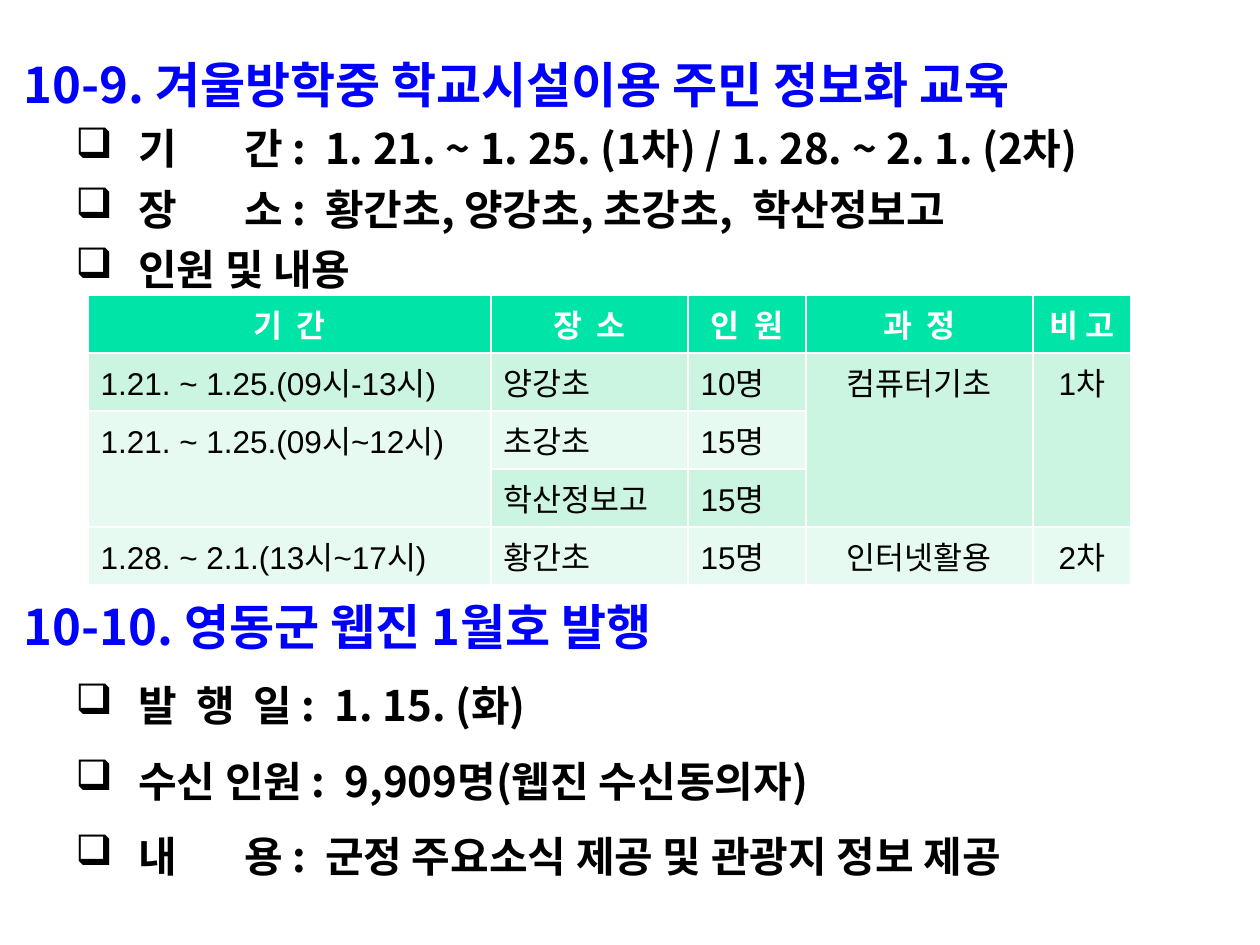
from dataclasses import dataclass

from lxml import etree
from pptx import Presentation, util as u
from pptx.dml.color import RGBColor
from pptx.enum import text
from pptx.oxml.ns import qn

PX = 914400 // 126


@dataclass(frozen=True)
class Theme:
    """Colours, fonts and type sizes of the slide."""
    heading: str = "0000FF"
    ink: str = "000000"
    header_text: str = "FFFFFF"
    header_fill: str = "00E4A8"
    bands: tuple = ("CCF5E1", "E7FAF1")
    korean: str = "Noto Sans CJK KR"
    latin: str = "Arial"
    heading_size: int = 28
    item_size: int = 24
    table_size: int = 18
    heading_line: int = 40
    label_gap: int = 3300


THEME = Theme()

COLUMNS = (403, 197, 118, 227, 98)
ROW_HEIGHT = 58
CENTRED_FROM = 3
SCHEDULE = (
    ("기  간", "장  소", "인  원", "과  정", "비 고"),
    ("1.21. ~ 1.25.(09시-13시)", "양강초", "10명", "컴퓨터기초", "1차"),
    ("1.21. ~ 1.25.(09시~12시)", "초강초", "15명", None, None),
    (None, "학산정보고", "15명", None, None),
    ("1.28. ~ 2.1.(13시~17시)", "황간초", "15명", "인터넷활용", "2차"),
)
MERGES = (((1, 3), (3, 3)), ((1, 4), (3, 4)), ((2, 0), (3, 0)))


def px(length):
    """Turn whole pixels into EMU."""
    return u.Emu(length * PX)


def style(paragraph, size, color, bold, latin):
    """Set the type of a whole paragraph."""
    font = paragraph.font
    font.size, font.bold, font.name = u.Pt(size), bold, latin
    font.color.rgb = RGBColor.from_string(color)
    defaults = paragraph._p.pPr.find(qn("a:defRPr"))
    defaults.find(qn("a:latin")).addnext(
        etree.Element(qn("a:ea"), typeface=THEME.korean))


def indent(paragraph, margin, hanging):
    """Give a paragraph a hanging indent and return its properties."""
    properties = paragraph._p.get_or_add_pPr()
    properties.set("marL", str(px(margin)))
    properties.set("indent", str(-px(hanging)))
    return properties


def add_heading(paragraph, title):
    """Write a numbered section heading."""
    indent(paragraph, 73, 73)
    paragraph.add_run().text = title
    paragraph.line_spacing = u.Pt(THEME.heading_line)
    style(paragraph, THEME.heading_size, THEME.heading, True, THEME.korean)


def add_item(paragraph, wording, line):
    """Write a bulleted item, widening the gap marked by a bar."""
    properties = indent(paragraph, 126, 63)
    bullet_color = etree.SubElement(properties, qn("a:buClr"))
    etree.SubElement(bullet_color, qn("a:srgbClr"), val=THEME.ink)
    etree.SubElement(properties, qn("a:buChar"), char="❑")
    start, gap, rest = wording.partition("|")
    paragraph.add_run().text = start
    if gap:
        space = paragraph.add_run()
        space.text = " "
        space.font._element.set("spc", str(THEME.label_gap))
        paragraph.add_run().text = rest
    paragraph.line_spacing = u.Pt(line)
    style(paragraph, THEME.item_size, THEME.ink, True, THEME.korean)


def add_section(slide, top, height, title, items, line):
    """Add a heading with its bulleted items."""
    frame = slide.shapes.add_textbox(0, px(top), px(1260), px(height)).text_frame
    frame.word_wrap = True
    frame.vertical_anchor = text.MSO_ANCHOR.TOP
    frame.margin_top = px(17)
    add_heading(frame.paragraphs[0], title)
    for wording in items:
        add_item(frame.add_paragraph(), wording, line)


def fill_cell(cell, wording, row, column):
    """Colour a schedule cell and write its wording."""
    header = row == 0
    cell.fill.solid()
    cell.fill.fore_color.rgb = RGBColor.from_string(
        THEME.header_fill if header else THEME.bands[(row - 1) % 2])
    if wording is None:
        return
    paragraph = cell.text_frame.paragraphs[0]
    paragraph.add_run().text = wording
    if header or column >= CENTRED_FROM:
        paragraph.alignment = text.PP_ALIGN.CENTER
    style(paragraph, THEME.table_size,
          THEME.header_text if header else THEME.ink, header, THEME.latin)


def add_schedule(slide, left, top):
    """Add the training schedule table."""
    schedule = slide.shapes.add_table(
        len(SCHEDULE), len(COLUMNS), px(left), px(top),
        px(sum(COLUMNS)), px(ROW_HEIGHT * len(SCHEDULE))).table
    for column, width in zip(schedule.columns, COLUMNS):
        column.width = px(width)
    for row, wordings in enumerate(SCHEDULE):
        for column, wording in enumerate(wordings):
            fill_cell(schedule.cell(row, column), wording, row, column)
    for first, last in MERGES:
        schedule.cell(*first).merge(schedule.cell(*last))


def main():
    """Build and save the slide."""
    deck = Presentation()
    deck.slide_width, deck.slide_height = px(1260), px(945)
    slide = deck.slides.add_slide(deck.slide_layouts[6])
    add_section(slide, 26, 507, " 10-9. 겨울방학중 학교시설이용 주민 정보화 교육", (
        "기|간 :  1. 21. ~ 1. 25. (1차) / 1. 28. ~ 2. 1. (2차)",
        "장|소 :  황간초, 양강초, 초강초,  학산정보고",
        "인원 및 내용"), 34.5)
    add_schedule(slide, 88, 295)
    add_section(slide, 568, 377, " 10-10. 영동군 웹진 1월호 발행", (
        "발  행  일 :  1. 15. (화)",
        "수신 인원 :  9,909명(웹진 수신동의자)",
        "내|용 :  군정 주요소식 제공 및 관광지 정보 제공"), 43)
    deck.save("out.pptx")


if __name__ == "__main__":
    main()
